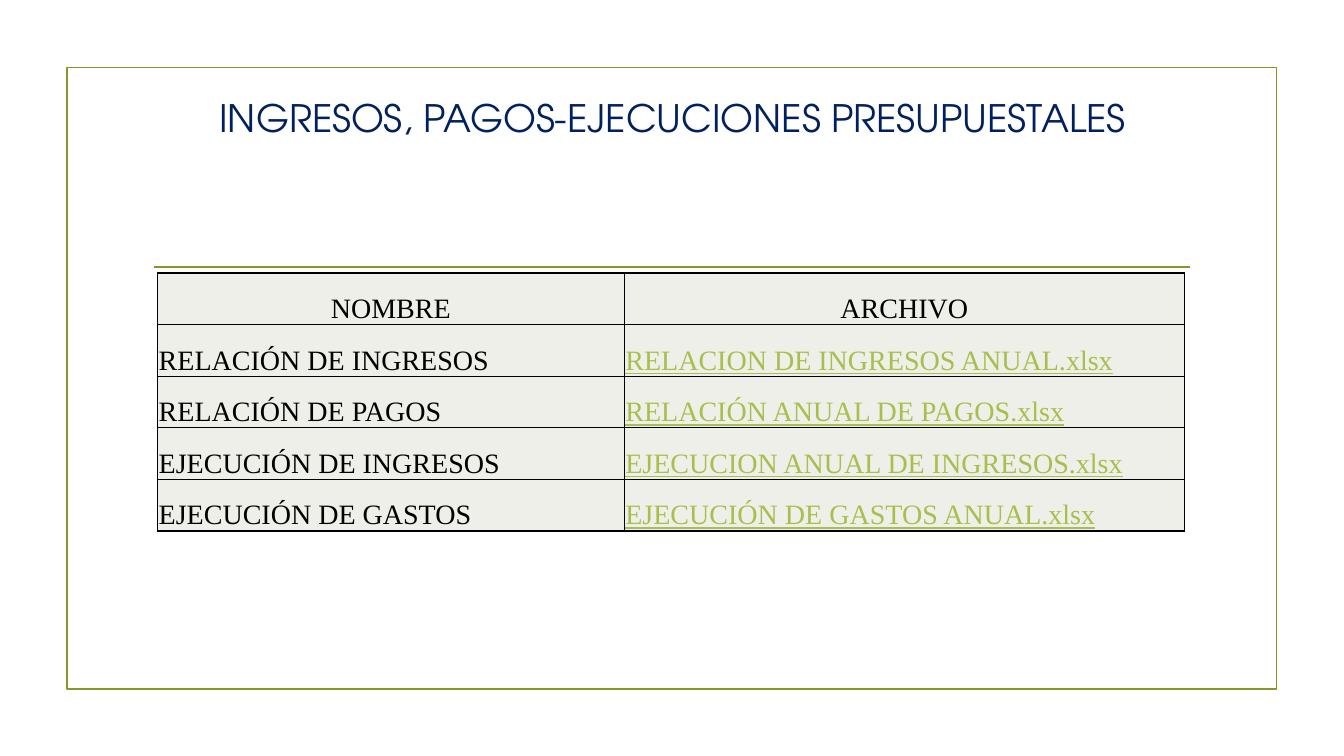
from lxml import etree
from pptx import Presentation
from pptx import util as u
from pptx.dml.color import RGBColor
from pptx.enum import shapes, text
from pptx.oxml.ns import qn

ROWS = [
    ("NOMBRE", "ARCHIVO"),
    ("RELACIÓN DE INGRESOS", "RELACION DE INGRESOS ANUAL.xlsx"),
    ("RELACIÓN DE PAGOS", "RELACIÓN ANUAL DE PAGOS.xlsx"),
    ("EJECUCIÓN DE INGRESOS", "EJECUCION ANUAL DE INGRESOS.xlsx"),
    ("EJECUCIÓN DE GASTOS", "EJECUCIÓN DE GASTOS ANUAL.xlsx"),
]


def color(code):
    return RGBColor.from_string(code)


class Page:
    green, navy, black = "83992A", "002060", "000000"
    link, pale = "A8BF4D", "EDEFE8"
    head, body = "TeX Gyre Adventor", "Times New Roman"

    def __init__(self, slide):
        self.slide = slide

    def stroke(self, line):
        line.color.rgb = color(self.green)
        line.width = u.Pt(1.25)

    def frame(self, *box):
        rect = self.slide.shapes.add_shape(
            shapes.MSO_SHAPE.RECTANGLE, *map(u.Cm, box))
        rect.shadow.inherit = False
        rect.fill.background()
        self.stroke(rect.line)

    def rule(self, left, right, y):
        line = self.slide.shapes.add_connector(
            shapes.MSO_CONNECTOR.STRAIGHT, *map(u.Cm, (left, y, right, y)))
        etree.SubElement(line._element.spPr, qn("a:effectLst"))
        self.stroke(line.line)

    def label(self, para, words, face, size, ink, center):
        para.text = words
        para.alignment = (text.PP_ALIGN.CENTER if center
                          else text.PP_ALIGN.LEFT)
        para.font.name = face
        para.font.size = u.Pt(size)
        para.font.color.rgb = color(ink)

    def title(self, words, *box):
        area = self.slide.shapes.add_textbox(*map(u.Cm, box)).text_frame
        area.word_wrap = True
        area.vertical_anchor = text.MSO_ANCHOR.MIDDLE
        self.label(area.paragraphs[0], words, self.head, 27, self.navy, True)

    def border(self, cell):
        """Draw a black line on all four sides of the cell."""
        props = cell._tc.get_or_add_tcPr()
        for spot, side in enumerate(("lnL", "lnR", "lnT", "lnB")):
            edge = etree.Element(qn("a:" + side), w=str(u.Pt(1)))
            fill = etree.SubElement(edge, qn("a:solidFill"))
            etree.SubElement(fill, qn("a:srgbClr"), val=self.black)
            props.insert(spot, edge)

    def table(self, rows, left, top, widths, height):
        grid = self.slide.shapes.add_table(
            len(rows), len(widths), u.Cm(left), u.Cm(top),
            u.Cm(sum(widths)), u.Cm(height * len(rows))).table
        for col, width in zip(grid.columns, widths):
            col.width = u.Cm(width)
        for r, row in enumerate(rows):
            grid.rows[r].height = u.Cm(height)
            for c, words in enumerate(row):
                self.cell(grid.cell(r, c), words, r == 0, r > 0 and c == 1)

    def cell(self, cell, words, top, link):
        cell.fill.solid()
        cell.fill.fore_color.rgb = color(self.pale)
        self.border(cell)
        cell.vertical_anchor = text.MSO_ANCHOR.BOTTOM
        cell.margin_left = cell.margin_right = cell.margin_top = u.Cm(0.03)
        cell.margin_bottom = 0
        para = cell.text_frame.paragraphs[0]
        ink = self.link if link else self.black
        self.label(para, words, self.body, 20, ink, top)
        para.font.underline = link


def main():
    deck = Presentation()
    deck.slide_width, deck.slide_height = u.Cm(33.87), u.Cm(19.05)
    page = Page(deck.slides.add_slide(deck.slide_layouts[6]))
    page.frame(1.69, 1.7, 30.48, 15.67)
    page.rule(3.89, 30, 6.73)
    page.title("INGRESOS, PAGOS-EJECUCIONES PRESUPUESTALES",
               3.61, 1.57, 26.67, 2.77)
    page.table(ROWS, 3.97, 6.88, (11.76, 14.12), 1.3)
    deck.save("out.pptx")


if __name__ == "__main__":
    main()
